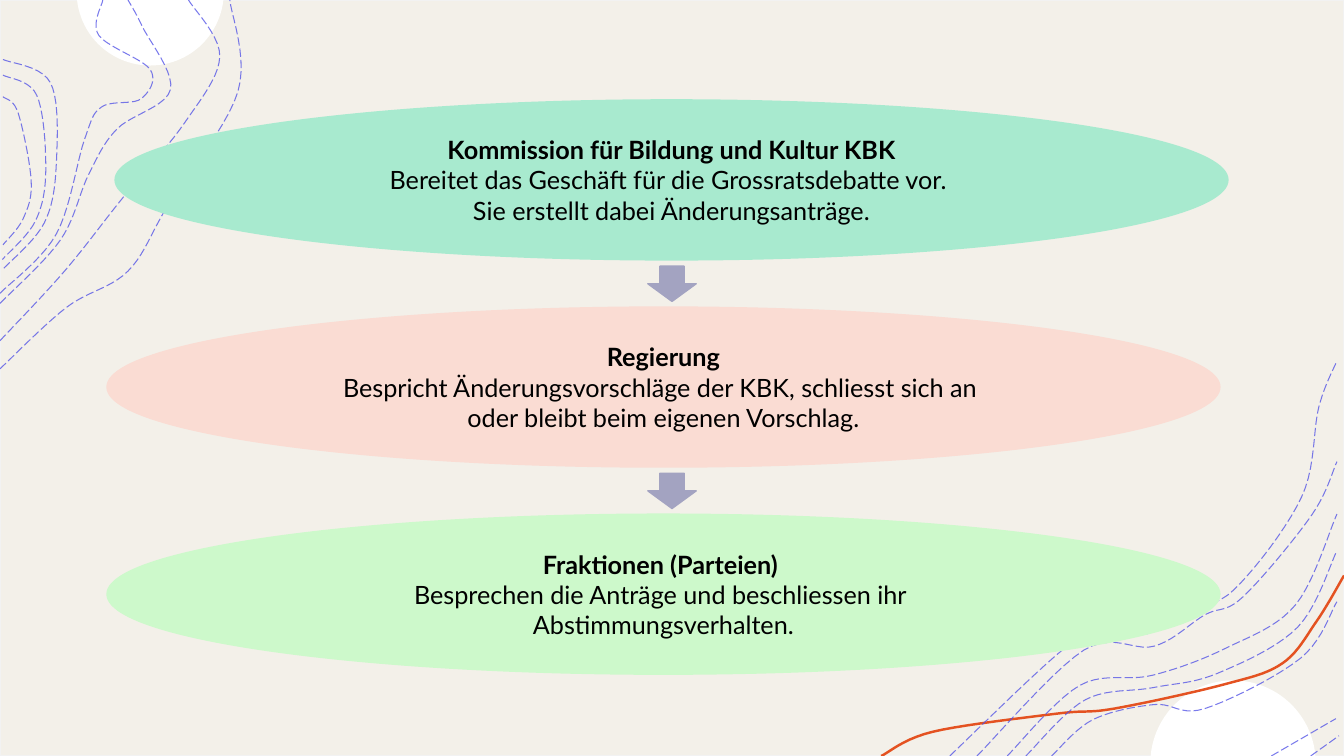
"""Build a slide showing three stages of a parliamentary debate, framed by contour lines."""
from math import asin, cos, pi, sin

from lxml import etree
from pptx import Presentation
from pptx.dml.color import RGBColor
from pptx.enum.dml import MSO_LINE
from pptx.enum.shapes import MSO_SHAPE
from pptx.enum.text import MSO_ANCHOR, PP_ALIGN
from pptx.oxml.ns import qn
from pptx.util import Inches, Pt

LONG_DASH = MSO_LINE.LONG_DASH
RECTANGLE, ELLIPSE, DOWN_ARROW = MSO_SHAPE.RECTANGLE, MSO_SHAPE.OVAL, MSO_SHAPE.DOWN_ARROW
CENTER, MIDDLE = PP_ALIGN.CENTER, MSO_ANCHOR.MIDDLE

WIDTH, HEIGHT = 13.33, 7.5
FONT = "Lato"
COLORS = {
    "paper": "F3F0E9", "edge": "F2F2F2", "white": "FFFFFF", "orange": "E45221",
    "contour": "4D4EE6", "mint": "A8EACF", "rose": "FADCD3", "lime": "CDF9CB",
    "arrow": "A3A3C1", "text": "000000",
}

STAGES = [
    ("mint", 0.08, [
        ["Kommission für Bildung und Kultur KBK"],
        ["Bereitet das Geschäft für die Grossratsdebatte vor. "],
        ["Sie erstellt dabei Änderungsanträge."],
    ]),
    ("rose", 0, [
        ["Regierung"],
        ["Bespricht Änderungsvorschläge der KBK, schliesst sich an ",
         "oder bleibt beim eigenen Vorschlag."],
    ]),
    ("lime", 0, [
        ["Fraktionen (Parteien) ", "Besprechen die Anträge und beschliessen ihr "],
        ["Abstimmungsverhalten."],
    ]),
]
STAGE_LEFT, STAGE_TOP, STAGE_WIDTH, STAGE_HEIGHT, STAGE_PITCH = 1.07, 1, 11.02, 1.57, 2.055
ARROW_WIDTH, ARROW_HEIGHT, ARROW_OFFSET = 0.48, 0.35, 1.64

DISCS = [(1.49, -0.08, 0.73), (12.23, 7.57, 0.82)]

ORANGE_CURVE = [(8.74, 7.5), (9.25, 7.26), (10.48, 7.08), (11.05, 7.03),
                (12.14, 6.79), (12.72, 6.58), (13.06, 6.16), (WIDTH, 5.71)]

SINGLE_CONTOURS = [
    [(0, 3.66), (0.66, 3.05), (1.27, 2.69), (1.67, 2.03), (2.36, 0.91), (2.28, 0)],
    [(0, 3.38), (0.64, 2.69), (1.22, 1.96), (1.83, 1.22), (2.18, 0.56), (1.87, 0)],
    [(0, 3.01), (0.6, 2.38), (0.88, 1.73), (1.16, 1.28), (1.69, 0.89), (1.41, 0.26), (1.27, 0)],
    [(0, 2.91), (0.56, 2.32), (0.84, 1.38), (1.01, 1.06), (1.4, 0.98), (1.49, 0.69),
     (0.98, 0.35), (1.02, 0)],
    [(9.42, 7.5), (10.56, 6.43), (11, 6.25), (11.37, 6.29), (11.73, 6.06), (12.24, 5.85),
     (12.91, 4.93), (13.08, 4.04), (13.26, 3.58)],
    [(9.69, 7.5), (10.75, 6.45), (11.45, 6.41), (11.95, 6.1), (12.33, 5.92), (13.01, 5.11),
     (13.26, 4.58)],
    [(13, 7.5), (13.28, 7.3)],
    [(12.61, 7.5), (13.25, 7.13)],
]
CONTOUR_FAMILIES = [
    ([(0.03, 0.59), (0.5, 0.82), (0.56, 1.6), (0.44, 2.21), (0.02, 2.68)],
     [(0.03, 0.96), (0.18, 1.12), (0.31, 1.8), (0.23, 2.17), (0.03, 2.43)]),
    ([(9.99, 7.5), (10.71, 6.8), (11.43, 6.7), (12.16, 6.43), (12.85, 6), (13.26, 5.1)],
     [(10.43, 7.5), (10.84, 7.14), (11.45, 6.99), (11.95, 7.03), (12.9, 6.53), (13.26, 5.97)]),
]
FAMILY_SHARES = (0, 0.42, 1)


def color(name):
    return RGBColor.from_string(COLORS[name])


def style(shape, fill=None, line=None, weight=1):
    shape.shadow.inherit = False
    for target, name in ((shape.fill, fill), (shape.line.fill, line)):
        if name:
            target.solid()
            target.fore_color.rgb = color(name)
        else:
            target.background()
    if line:
        shape.line.width = Pt(weight)
    return shape


def add_box(page, kind, left, top, width, height, **look):
    frame = [Inches(value) for value in (left, top, width, height)]
    return style(page.shapes.add_shape(kind, *frame), **look)


def add_outline(page, points, close=False, **look):
    start, *rest = [(Inches(x), Inches(y)) for x, y in points]
    builder = page.shapes.build_freeform(*start, scale=1.0)
    builder.add_line_segments(rest, close=close)
    return style(builder.convert_to_shape(), **look)


def smooth(points, steps=10):
    """Return a Catmull-Rom curve through the points."""
    padded = [points[0], *points, points[-1]]
    curve = [points[0]]
    for before, start, end, after in zip(padded, padded[1:], padded[2:], padded[3:]):
        for step in range(1, steps + 1):
            t = step / steps
            curve.append(tuple(
                (2 * b + (c - a) * t + (2 * a - 5 * b + 4 * c - d) * t ** 2
                 + (3 * b - a - 3 * c + d) * t ** 3) / 2
                for a, b, c, d in zip(before, start, end, after)))
    return curve


def blend(outer, inner, share):
    return [tuple(a + (b - a) * share for a, b in zip(*pair)) for pair in zip(outer, inner)]


def disc_arc(center_x, center_y, radius, steps=48):
    """Return the part of a disc that lies on the page."""
    edge, side = (0, 1) if center_y < 0 else (HEIGHT, -1)
    first = asin(abs(edge - center_y) / radius)
    angles = [first + (pi - 2 * first) * step / steps for step in range(steps + 1)]
    return [(center_x + radius * cos(angle), center_y + side * radius * sin(angle))
            for angle in angles]


def add_span(para, text, size=18, bold=False, ink="text"):
    span = para.add_run()
    span.text = text
    span.font.name, span.font.size, span.font.bold = FONT, Pt(size), bold
    span.font.color.rgb = color(ink)


def write_stage(shape, paragraphs):
    frame = shape.text_frame
    frame.word_wrap, frame.vertical_anchor = True, MIDDLE
    for index, lines in enumerate(paragraphs):
        para = frame.add_paragraph() if index else frame.paragraphs[0]
        para.alignment = CENTER
        for row, text in enumerate(lines):
            if row:
                para.add_line_break()
            add_span(para, text, bold=index == row == 0)


def main():
    deck = Presentation()
    deck.slide_width, deck.slide_height = Inches(WIDTH), Inches(HEIGHT)
    page = deck.slides.add_slide(deck.slide_layouts[6])
    add_box(page, RECTANGLE, 0, 0, WIDTH, HEIGHT, fill="paper", line="edge")
    for disc in DISCS:
        add_outline(page, disc_arc(*disc), close=True, fill="white")
    add_outline(page, smooth(ORANGE_CURVE), line="orange", weight=1.75)
    blended = [blend(*family, share) for family in CONTOUR_FAMILIES for share in FAMILY_SHARES]
    for points in SINGLE_CONTOURS + blended:
        contour = add_outline(page, smooth(points), line="contour", weight=0.75)
        contour.line.dash_style = LONG_DASH
        ink = contour.element.xpath(".//a:ln//a:srgbClr")[0]
        etree.SubElement(ink, qn("a:alpha")).set("val", "75000")

    for index, (name, shift, paragraphs) in enumerate(STAGES):
        top = STAGE_TOP + index * STAGE_PITCH
        stage = add_box(page, ELLIPSE, STAGE_LEFT + shift, top, STAGE_WIDTH, STAGE_HEIGHT,
                        fill=name, line=name, weight=2.25)
        write_stage(stage, paragraphs)
        if index < len(STAGES) - 1:
            add_box(page, DOWN_ARROW, (WIDTH - ARROW_WIDTH) / 2, top + ARROW_OFFSET,
                    ARROW_WIDTH, ARROW_HEIGHT, fill="arrow", line="arrow")
    deck.save("out.pptx")


if __name__ == "__main__":
    main()
